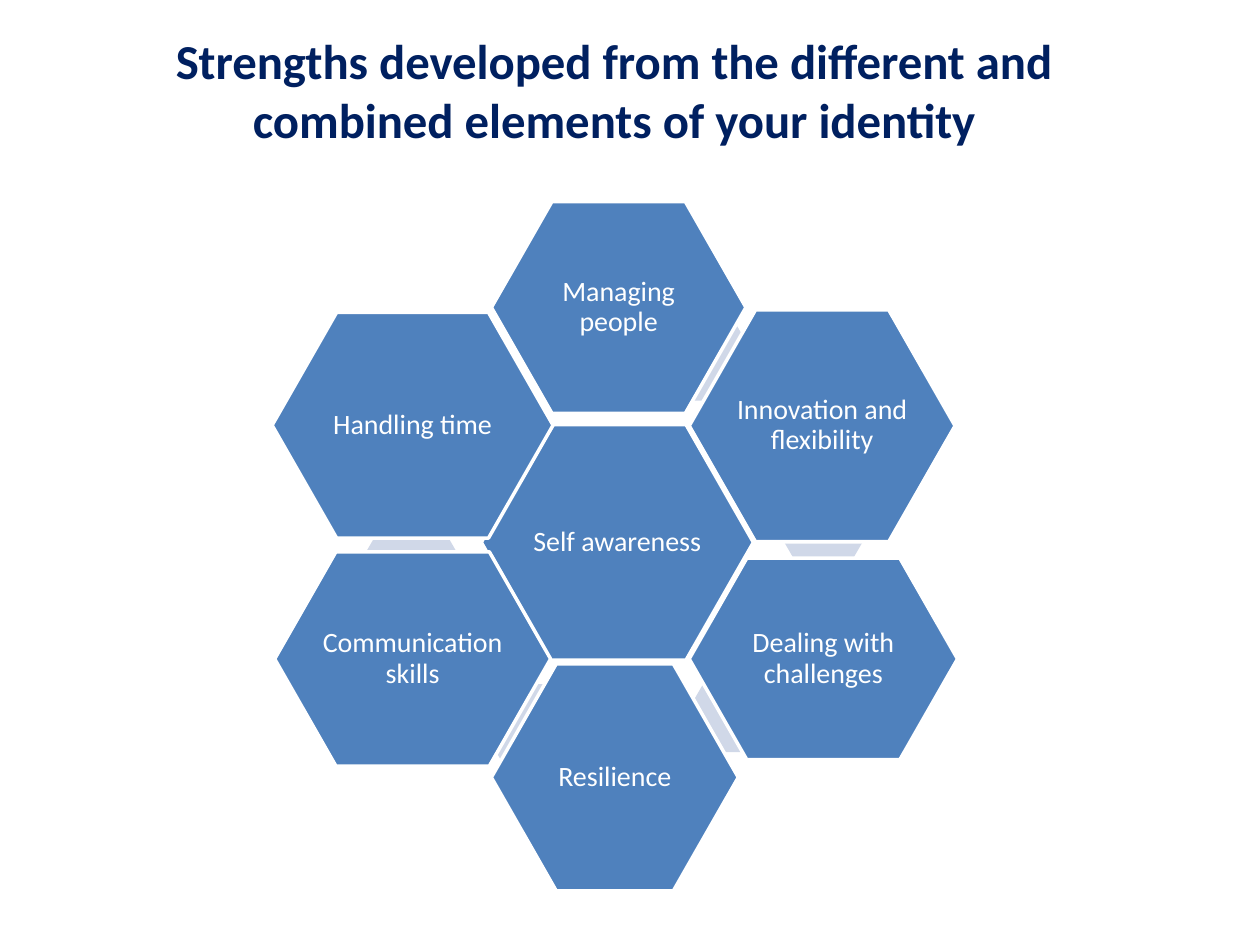
from pptx import Presentation
from pptx.dml.color import RGBColor
from pptx.enum.shapes import MSO_SHAPE
from pptx.enum.text import MSO_ANCHOR, MSO_AUTO_SIZE, PP_ALIGN
from pptx.util import Inches, Pt

COLORS = {"navy": "002060", "blue": "4F81BD", "pale": "D0D8E8", "white": "FFFFFF"}


def write(frame, text, size, color, bold=False, spacing=1.0, inset=0.1):
    frame.word_wrap = True
    frame.auto_size = MSO_AUTO_SIZE.NONE
    frame.vertical_anchor = MSO_ANCHOR.MIDDLE
    frame.margin_left = frame.margin_right = Inches(inset)
    frame.margin_top = frame.margin_bottom = Inches(min(inset, 0.05))
    paragraph = frame.paragraphs[0]
    paragraph.alignment = PP_ALIGN.CENTER
    paragraph.line_spacing = spacing
    run = paragraph.add_run()
    run.text = text
    run.font.name = "Calibri"
    run.font.size = Pt(size)
    run.font.bold = bold
    run.font.color.rgb = RGBColor.from_string(COLORS[color])


def add_hexagon(box, color, adjustment):
    hexagon = slide.shapes.add_shape(MSO_SHAPE.HEXAGON, *[Inches(n) for n in box])
    hexagon.shadow.inherit = False
    hexagon.adjustments[0] = adjustment
    hexagon.adjustments[1] = 1.155
    hexagon.fill.solid()
    hexagon.fill.fore_color.rgb = RGBColor.from_string(COLORS[color])
    hexagon.line.fill.background()
    return hexagon


prs = Presentation()
prs.slide_width, prs.slide_height = Inches(10), Inches(7.5)
slide = prs.slides.add_slide(prs.slide_layouts[5])

# Title
title = slide.shapes.title
title.left, title.top = Inches(0.58), Inches(0.04)
title.width, title.height = Inches(8.59), Inches(1.34)
write(title.text_frame,
      "Strengths developed from the different and combined elements of your identity",
      size=27.9, color="navy", bold=True)

# Strengths, back to front: label, hexagon box, corner of the pale link behind it
strengths = [
    ("Self awareness", (3.82, 3.37, 2.16, 1.87), None),
    ("Managing people", (3.9, 1.6, 2.02, 1.68), (5.18, 2.48)),
    ("Innovation and flexibility", (5.47, 2.46, 2.11, 1.84), (6.13, 3.79)),
    ("Dealing with challenges", (5.47, 4.43, 2.13, 1.6), (5.47, 5.27)),
    ("Resilience", (3.9, 5.27, 1.96, 1.8), (3.83, 5.43)),
    ("Communication skills", (2.18, 4.38, 2.19, 1.7), (2.86, 4.11)),
    ("Handling time", (2.16, 2.48, 2.23, 1.79), None),
]
for label, box, link in strengths:
    if link:
        add_hexagon((*link, 0.81, 0.7), "pale", 0.289)
    strength = add_hexagon(box, "blue", 0.286)
    strength.line.color.rgb = RGBColor.from_string(COLORS["white"])
    strength.line.width = Pt(2)
    write(strength.text_frame, label, size=16, color="white", spacing=0.9, inset=0.02)

prs.save("out.pptx")
